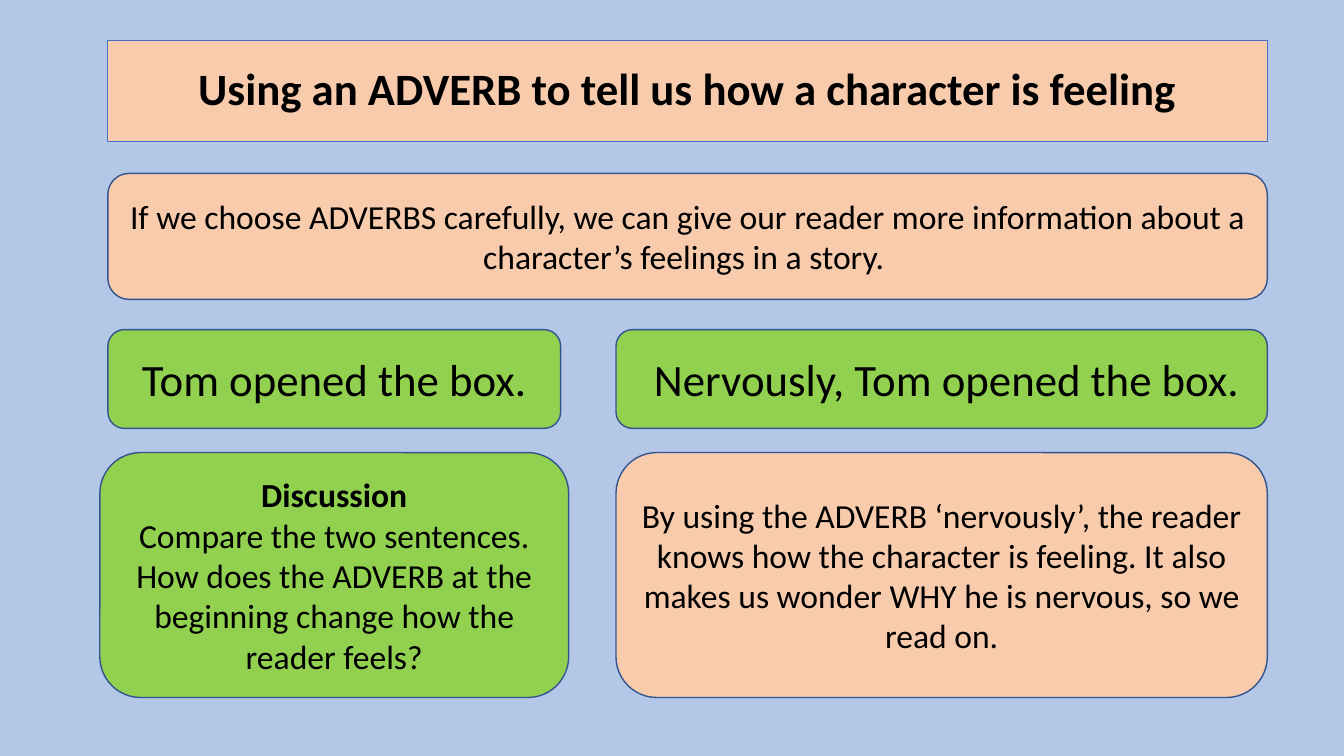
"""Build a slide on using adverbs to show how a character is feeling."""
from pptx import Presentation
from pptx.dml.color import RGBColor
from pptx.enum import shapes, text
from pptx.util import Inches, Pt

SKY = RGBColor(0xB4, 0xC7, 0xE7)
PEACH = RGBColor(0xF8, 0xCB, 0xAD)
GREEN = RGBColor(0x92, 0xD0, 0x50)
BLUE = RGBColor(0x44, 0x72, 0xC4)
NAVY = RGBColor(0x32, 0x54, 0x91)
BLACK = RGBColor(0, 0, 0)

prs = Presentation()
prs.slide_width, prs.slide_height = Inches(13.33), Inches(7.5)
s = prs.slides.add_slide(prs.slide_layouts[6])
s.background.fill.solid()
s.background.fill.fore_color.rgb = SKY


def add_box(kind, box, fill, line, width, size, lines):
    sp = s.shapes.add_shape(kind, *[Inches(v) for v in box])
    sp.shadow.inherit = False
    sp.fill.solid()
    sp.fill.fore_color.rgb = fill
    sp.line.color.rgb = line
    sp.line.width = Pt(width)
    tf = sp.text_frame
    tf.word_wrap = True
    tf.vertical_anchor = text.MSO_ANCHOR.MIDDLE
    tf.text = "\n".join(lines)
    for p in tf.paragraphs:
        p.alignment = text.PP_ALIGN.CENTER
        f = p.runs[0].font
        f.name, f.size, f.bold = "Calibri", Pt(size), False
        f.color.rgb = BLACK
    return tf


LEFT, RIGHT = 1.07, 6.11
FULL_W, RIGHT_W = 11.5, 6.46
SENTENCE_Y, SENTENCE_H = 3.27, 0.98
NOTE_Y, NOTE_H = 4.49, 2.43

title = add_box(shapes.MSO_SHAPE.RECTANGLE, (LEFT, 0.4, FULL_W, 1), PEACH, BLUE, 0.75, 32,
                ["Using an ADVERB to tell us how a character is feeling"])
title.paragraphs[0].line_spacing = 0.9
title.paragraphs[0].runs[0].font.bold = True

cards = [
    ((LEFT, 1.72, FULL_W, 1.25), PEACH, 24,
     ["If we choose ADVERBS carefully, we can give our reader more information "
      "about a character’s feelings in a story. "]),
    ((LEFT, SENTENCE_Y, 4.49, SENTENCE_H), GREEN, 32, ["Tom opened the box."]),
    ((RIGHT, SENTENCE_Y, RIGHT_W, SENTENCE_H), GREEN, 32,
     [" Nervously, Tom opened the box."]),
    ((0.99, NOTE_Y, 4.65, NOTE_H), GREEN, 24,
     ["Discussion",
      "Compare the two sentences. How does the ADVERB at the beginning "
      "change how the reader feels?"]),
    ((RIGHT, NOTE_Y, RIGHT_W, NOTE_H), PEACH, 24,
     ["By using the ADVERB ‘nervously’, the reader knows how the character is "
      "feeling. It also makes us wonder WHY he is nervous, so we read on."]),
]
for box, fill, size, lines in cards:
    tf = add_box(shapes.MSO_SHAPE.ROUNDED_RECTANGLE, box, fill, NAVY, 1, size, lines)
    if len(lines) > 1:
        tf.paragraphs[0].runs[0].font.bold = True

prs.save("out.pptx")
